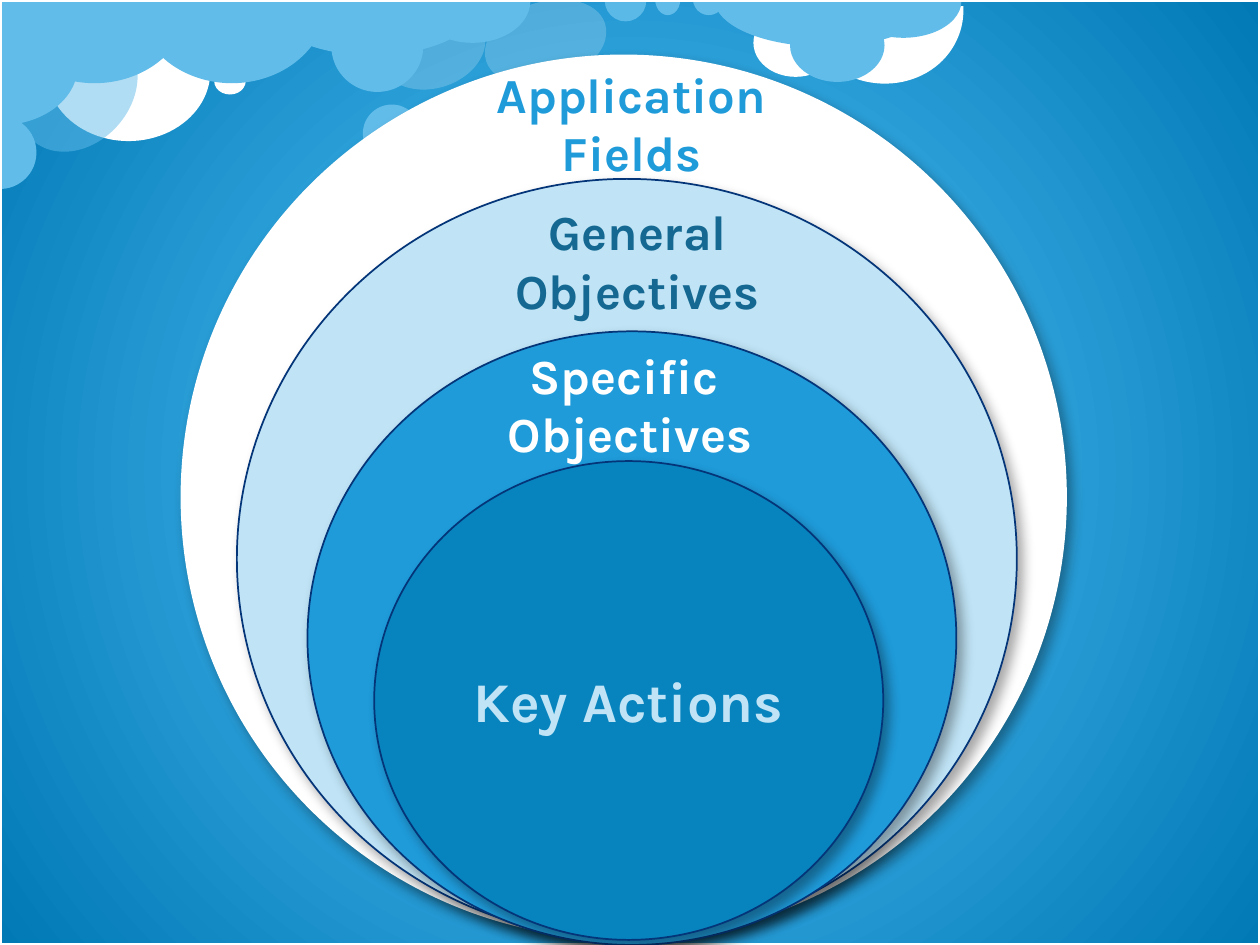
"""Build a slide of four nested circles leading from application fields to key actions."""
from lxml.etree import SubElement
from pptx import Presentation
from pptx.dml.color import RGBColor
from pptx.enum.shapes import MSO_SHAPE as Shape
from pptx.enum.text import MSO_ANCHOR as Anchor, MSO_AUTO_SIZE as AutoSize, PP_ALIGN as Align
from pptx.oxml import parse_xml
from pptx.oxml.ns import nsdecls, qn
from pptx.util import Inches, Pt

WHITE, SKY, PALE, BLUE, NAVY = "FFFFFF", "62BCE9", "C0E4F6", "1F9BDA", "043579"
OVAL, PIE, ARC = Shape.OVAL, Shape.PIE, Shape.ARC


def paint(target, color, opacity=100):
    """Give a fill a solid colour, with opacity in percent."""
    target.solid()
    target.fore_color.rgb = RGBColor.from_string(color)
    if opacity < 100:
        tint = target._xPr.find(".//" + qn("a:srgbClr"))
        SubElement(tint, qn("a:alpha"), val=str(opacity * 1000))


def write(frame, lines, size, color):
    """Write centred bold lines into a text frame."""
    for index, line in enumerate(lines):
        para = frame.paragraphs[0] if index == 0 else frame.add_paragraph()
        para.alignment = Align.CENTER
        span = para.add_run()
        span.text = line
        span.font.name = "Karla"
        span.font.size = Pt(size)
        span.font.bold = True
        span.font.color.rgb = RGBColor.from_string(color)


deck = Presentation()
deck.slide_width, deck.slide_height = Inches(10), Inches(7.5)
page = deck.slides.add_slide(deck.slide_layouts[6])

backdrop = page.background.fill
backdrop.gradient()
for stop, color in zip(backdrop.gradient_stops, ("5DC9FF", "0079B5")):
    stop.color.rgb = RGBColor.from_string(color)
for position, stop in enumerate(backdrop.gradient_stops):
    stop.position = position
gradient = page._element.find(".//" + qn("a:gradFill"))
gradient.remove(gradient.find(qn("a:lin")))
gradient.append(parse_xml(
    f'<a:path {nsdecls("a")} path="circle">'
    '<a:fillToRect l="50000" t="50000" r="50000" b="50000"/></a:path>'))

clouds = [
    (OVAL, 3.11, -0.05, 0.64, 0.86, 72.8, WHITE, 20),
    (OVAL, 0.37, 0.01, 1.3, 1.11, 0, WHITE, 100),
    (ARC, 6.39, -0.6, 1.21, 1.31, 106.5, WHITE, 100),
    (OVAL, 5.98, 0.07, 0.67, 0.54, 0, WHITE, 100),
    (PIE, -0.01, -0.66, 1.52, 1.32, 0, SKY, 100),
    (PIE, 2.08, -0.44, 1.75, 0.88, 0, SKY, 100),
    (OVAL, 2.88, 0.83, 0.46, 0.46, 0, SKY, 100),
    (OVAL, 0.19, 0.18, 0.85, 1.07, 41.8, SKY, 50),
    (PIE, -0.29, 0.92, 0.58, 0.58, 270, SKY, 100),
    (OVAL, 1.7, 0.54, 0.25, 0.21, 0, WHITE, 100),
    (PIE, 1.08, -0.66, 1.52, 1.32, 0, SKY, 100),
    (PIE, 5.67, -0.38, 1.75, 0.75, 0, SKY, 100),
    (OVAL, 6.27, 0.07, 0.75, 0.58, 0, SKY, 100),
    (PIE, 6.71, -0.28, 0.92, 0.58, 0, SKY, 100),
    (OVAL, 4.01, -0.16, 0.64, 0.99, 72.8, WHITE, 20),
    (PIE, 4.8, -0.16, 0.33, 0.33, 0, "8FD9FB", 50),
    (PIE, 5.2, -0.13, 0.2, 0.25, 0, SKY, 100),
    (PIE, 5.5, -0.13, 0.25, 0.25, 0, SKY, 100),
    (OVAL, 2.63, 0, 0.73, 0.73, 0, SKY, 100),
    (PIE, 3.29, -0.33, 0.92, 0.67, 0, SKY, 100),
    (PIE, -0.47, -0.09, 0.93, 1.24, 270, SKY, 100),
]
angles = {PIE: (0, 108), ARC: (151.8, 44.48)}
for kind, left, top, width, height, turn, color, opacity in clouds:
    puff = page.shapes.add_shape(kind, Inches(left), Inches(top), Inches(width), Inches(height))
    for index, angle in enumerate(angles.get(kind, ())):
        puff.adjustments[index] = angle
    puff.rotation = turn
    puff.shadow.inherit = False
    puff.line.fill.background()
    paint(puff.fill, color, opacity)

border = page.shapes.add_shape(Shape.RECTANGLE, 0, 0, deck.slide_width, deck.slide_height)
border.shadow.inherit = False
border.fill.background()
paint(border.line.fill, WHITE)
border.line.width = Pt(2)

circles = [
    (1.44, 0.44, 7.02, 7.01, WHITE, WHITE),
    (1.88, 1.42, 6.19, 6.03, PALE, NAVY),
    (2.44, 2.63, 5.15, 4.87, BLUE, NAVY),
    (2.97, 3.66, 4.04, 3.8, "0784BE", NAVY),
]
for left, top, width, height, color, outline in circles:
    circle = page.shapes.add_shape(OVAL, Inches(left), Inches(top), Inches(width), Inches(height))
    paint(circle.fill, color)
    paint(circle.line.fill, outline)
    circle.line.width = Pt(1)
    circle.shadow.inherit = False
    effects = circle._element.spPr.find(qn("a:effectLst"))
    effects.append(parse_xml(
        f'<a:outerShdw {nsdecls("a")} blurRad="{Pt(7)}" dist="{Pt(5)}" dir="{50 * 60000}" '
        'algn="tl" rotWithShape="0"><a:srgbClr val="000000"><a:alpha val="35000"/>'
        '</a:srgbClr></a:outerShdw>'))
circle.text_frame.vertical_anchor = Anchor.MIDDLE
write(circle.text_frame, ["Key Actions"], 32, PALE)

labels = [
    (3.86, 2.69, 2.28, 1.04, ["Specific ", "Objectives"], WHITE),
    (3.92, 1.55, 2.28, 1.04, ["General", "Objectives"], "146891"),
    (3.8, 0.46, 2.42, 1.51, ["Application", "Fields"], BLUE),
]
for left, top, width, height, lines, color in labels:
    box = page.shapes.add_textbox(Inches(left), Inches(top), Inches(width), Inches(height))
    box.text_frame.word_wrap = False
    box.text_frame.auto_size = AutoSize.SHAPE_TO_FIT_TEXT
    write(box.text_frame, lines, 28, color)

deck.save("out.pptx")
